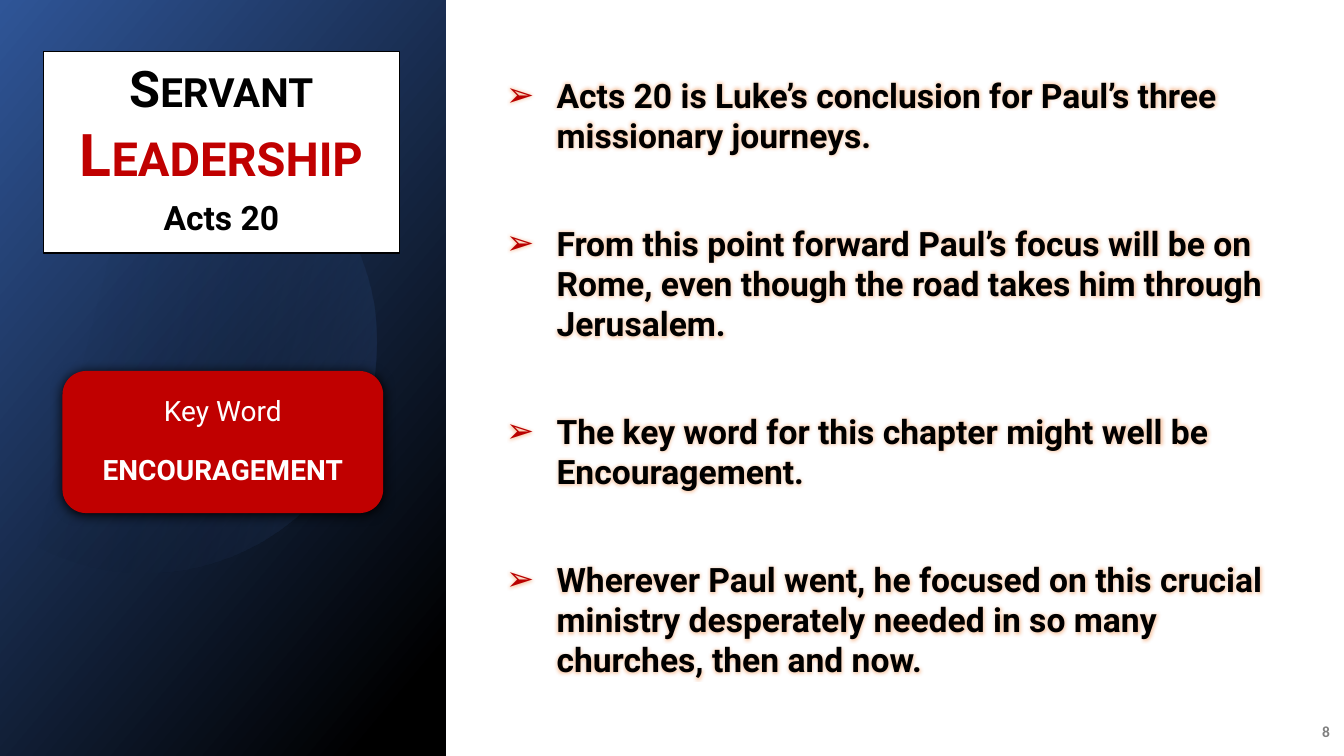
from copy import deepcopy
from dataclasses import dataclass
from math import acos, cos, sin

from lxml import etree
from pptx import Presentation
from pptx.dml.color import RGBColor
from pptx.enum.shapes import MSO_SHAPE
from pptx.enum.text import MSO_ANCHOR, MSO_AUTO_SIZE, PP_ALIGN
from pptx.oxml import parse_xml
from pptx.oxml.ns import nsdecls, qn
from pptx.util import Inches, Pt

RECTANGLE, ROUNDED = MSO_SHAPE.RECTANGLE, MSO_SHAPE.ROUNDED_RECTANGLE
TOP, MIDDLE = MSO_ANCHOR.TOP, MSO_ANCHOR.MIDDLE
LEFT, CENTER, RIGHT = PP_ALIGN.LEFT, PP_ALIGN.CENTER, PP_ALIGN.RIGHT
FIXED = MSO_AUTO_SIZE.NONE
WIDTH, HEIGHT = Inches(13.33), Inches(7.5)


@dataclass(frozen=True)
class Theme:
    """Colours, fonts and type sizes of the slide."""
    black: str = "000000"
    white: str = "FFFFFF"
    red: str = "C00000"
    bullet: str = "B90000"
    blue: str = "2F5597"
    light_blue: str = "4472C4"
    glow: str = "ED7D31"
    grey: str = "808080"
    font: str = "Roboto"
    number_font: str = "Calibri"
    title: int = 36
    emphasis: int = 42
    body: int = 24
    label: int = 20
    number: int = 11


THEME = Theme()
POINTS = (
    "Acts 20 is Luke’s conclusion for Paul’s three missionary journeys.",
    "From this point forward Paul’s focus will be on Rome, even though the road "
    "takes him through Jerusalem.",
    "The key word for this chapter might well be Encouragement.",
    "Wherever Paul went, he focused on this crucial ministry desperately needed "
    "in so many churches, then and now.",
)


def area(left, top, width, height):
    """Turn percentages of the slide's size into lengths."""
    return (int(WIDTH * left / 100), int(HEIGHT * top / 100),
            int(WIDTH * width / 100), int(HEIGHT * height / 100))


def apply(target, values):
    """Set the attributes of an object from a dict."""
    for name, value in values.items():
        setattr(target, name, value)


def place(shape, box):
    """Move a placeholder to a box."""
    apply(shape, dict(zip(("left", "top", "width", "height"), box)))


def paint(shape, color, outline=None):
    """Give a shape a plain fill and an optional thin outline."""
    shape.fill.solid()
    shape.fill.fore_color.rgb = RGBColor.from_string(color)
    if outline:
        shape.line.color.rgb = RGBColor.from_string(outline)
        shape.line.width = Pt(0.75)
    else:
        shape.line.fill.background()


def shade(shape, angle, stops):
    """Fill a shape with a gradient of (position, colour, opacity) stops."""
    shape.shadow.inherit = False
    shape.line.fill.background()
    shape.fill.gradient()
    shape.fill.gradient_angle = angle
    for stop, (position, color, opacity) in zip(shape.fill.gradient_stops, stops):
        stop.position = position
        stop.color.rgb = RGBColor.from_string(color)
    if stops[-1][2] < 100 or stops[0][2] < 100:
        colors = shape._element.spPr.iter(qn("a:srgbClr"))
        for color, stop in zip(list(colors), stops):
            etree.SubElement(color, qn("a:alpha"), val=str(stop[2] * 1000))


def set_frame(shape, anchor, margins=(0.1, 0.05, 0.1, 0.05)):
    """Set anchor, wrapping and margins, and return the text frame."""
    frame = shape.text_frame
    apply(frame, {"word_wrap": True, "auto_size": FIXED, "vertical_anchor": anchor})
    sides = ("margin_left", "margin_top", "margin_right", "margin_bottom")
    apply(frame, dict(zip(sides, map(Inches, margins))))
    return frame


def next_paragraph(frame, **values):
    """Return the empty first paragraph or a new one, formatted."""
    first = frame.paragraphs[0]
    paragraph = frame.add_paragraph() if first.runs else first
    apply(paragraph, {"line_spacing": 1, "space_before": Pt(0)} | values)
    return paragraph


def add_run(paragraph, text, size, color, bold=True, font=THEME.font):
    """Add formatted text to a paragraph."""
    run = paragraph.add_run()
    run.text = text
    apply(run.font, {"size": Pt(size), "bold": bold, "name": font})
    run.font.color.rgb = RGBColor.from_string(color)
    return run


def add_panel(slide):
    """Draw the dark side panel and its faint disc."""
    panel = slide.shapes.add_shape(RECTANGLE, *area(0, 0, 33.16, 100))
    shade(panel, 320, ((0, THEME.blue, 100), (0.92, THEME.black, 100)))
    center_x, center_y, radius, steps = 1.44, 3.39, 2.29, 120
    limit = acos(-center_x / radius)
    angles = [limit * (2 * step / steps - 1) for step in range(steps + 1)]
    arc = [(Inches(center_x + radius * cos(angle)),
            Inches(center_y + radius * sin(angle))) for angle in angles]
    builder = slide.shapes.build_freeform(*arc[0])
    builder.add_line_segments(arc[1:], close=True)
    shade(builder.convert_to_shape(), 346,
          ((0.29, THEME.black, 0), (1, THEME.light_blue, 22)))


def add_title(slide):
    """Format the title placeholder as a white rounded card."""
    title = slide.shapes.title
    place(title, area(3.23, 6.8, 26.48, 26.67))
    title._element.spPr.append(parse_xml(
        f'<a:prstGeom {nsdecls("a")} prst="roundRect"><a:avLst/></a:prstGeom>'))
    paint(title, THEME.white, THEME.black)
    frame = set_frame(title, MIDDLE, (0, 0, 0, 0.1))
    heading = next_paragraph(frame, alignment=CENTER, space_after=Pt(6))
    first = add_run(heading, "Servant", THEME.title, THEME.black)
    heading.add_line_break()
    second = add_run(heading, "Leadership", THEME.emphasis, THEME.red)
    for run in (first, second):
        run.font._element.set("cap", "small")
    heading._p.find(qn("a:br")).append(deepcopy(first.font._element))
    chapter = next_paragraph(frame, alignment=CENTER, space_after=Pt(6))
    add_run(chapter, "Acts 20", THEME.body, THEME.black)
    slide.shapes._spTree.append(title._element)


def add_key_word(slide):
    """Draw the red key word card with its soft shadow."""
    card = slide.shapes.add_shape(ROUNDED, *area(4.65, 49.07, 23.86, 18.8))
    paint(card, THEME.red)
    card._element.spPr.append(parse_xml(
        f'<a:effectLst {nsdecls("a")}><a:outerShdw blurRad="{Pt(8.5)}" '
        f'dist="{Pt(1)}" dir="5400000" algn="t" rotWithShape="0">'
        f'<a:srgbClr val="{THEME.black}"/></a:outerShdw></a:effectLst>'))
    frame = set_frame(card, MIDDLE, (0.1, 0, 0.1, 0.05))
    for text, bold, gap in (("Key Word", False, 0), ("ENCOURAGEMENT", True, 18)):
        paragraph = next_paragraph(frame, alignment=CENTER, space_before=Pt(gap))
        add_run(paragraph, text, THEME.label, THEME.white, bold)


def add_points(slide):
    """Fill the body placeholder with glowing bulleted points."""
    body = slide.placeholders[1]
    place(body, area(36.91, 9.2, 59.11, 79.73))
    frame = set_frame(body, TOP)
    for text in POINTS:
        paragraph = next_paragraph(frame, alignment=LEFT, space_after=Pt(48))
        properties = paragraph._p.get_or_add_pPr()
        properties.set("marL", str(Inches(0.5)))
        properties.set("indent", str(-Inches(0.5)))
        color = etree.SubElement(properties, qn("a:buClr"))
        etree.SubElement(color, qn("a:srgbClr"), val=THEME.bullet)
        etree.SubElement(properties, qn("a:buFont"), typeface="Arial")
        etree.SubElement(properties, qn("a:buChar"), char="➢")
        run = add_run(paragraph, text, THEME.body, THEME.black)
        run.font._element.find(qn("a:solidFill")).addnext(parse_xml(
            f'<a:effectLst {nsdecls("a")}><a:glow rad="{Pt(5)}">'
            f'<a:srgbClr val="{THEME.glow}"><a:alpha val="40000"/></a:srgbClr>'
            f'</a:glow></a:effectLst>'))
    slide.shapes._spTree.append(body._element)


def add_number(slide):
    """Write the slide number in the lower right corner."""
    box = slide.shapes.add_textbox(*area(96.02, 94.13, 3.68, 5.33))
    paragraph = next_paragraph(set_frame(box, MIDDLE), alignment=RIGHT, space_after=Pt(6))
    add_run(paragraph, "8", THEME.number, THEME.grey, font=THEME.number_font)


def main():
    """Build the slide and save it."""
    presentation = Presentation()
    apply(presentation, {"slide_width": WIDTH, "slide_height": HEIGHT})
    slide = presentation.slides.add_slide(presentation.slide_layouts[1])
    for add_element in (add_panel, add_title, add_key_word, add_points, add_number):
        add_element(slide)
    presentation.save("out.pptx")


if __name__ == "__main__":
    main()
